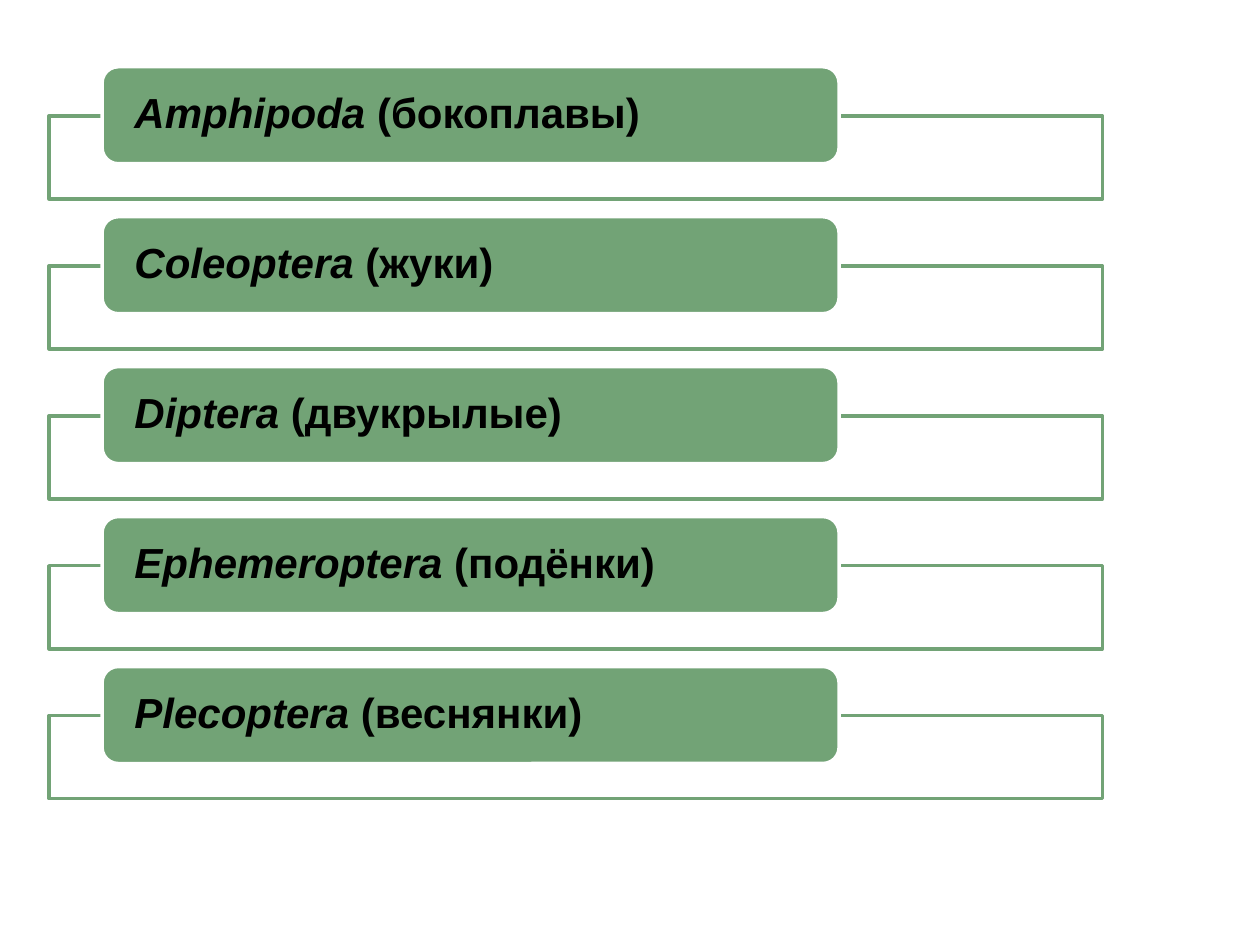
from lxml import etree
from pptx import Presentation
from pptx.dml.color import RGBColor
from pptx.enum.shapes import MSO_SHAPE
from pptx.enum.text import MSO_ANCHOR, PP_ALIGN
from pptx.oxml.ns import qn
from pptx.util import Inches, Pt

RECT = MSO_SHAPE.RECTANGLE
ROUND_RECT = MSO_SHAPE.ROUNDED_RECTANGLE
MIDDLE = MSO_ANCHOR.MIDDLE
LEFT = PP_ALIGN.LEFT

COLORS = {"green": "72A376", "white": "FFFFFF", "black": "000000"}
FONT = {"name": "Arial", "size": Pt(24), "bold": True}
FRAME_FORMAT = {
    "word_wrap": True,
    "vertical_anchor": MIDDLE,
    "margin_left": Inches(0.22),
    "margin_right": Inches(0.22),
    "margin_top": 0,
    "margin_bottom": 0,
}

# Latin order name and its Russian name
ORDERS = [
    ("Amphipoda", "бокоплавы"),
    ("Coleoptera", "жуки"),
    ("Diptera", "двукрылые"),
    ("Ephemeroptera", "подёнки"),
    ("Plecoptera", "веснянки"),
]
FIRST_TOP = 0.53
ROW_STEP = 1.19
FRAME_DROP = 0.39


def color(name):
    return RGBColor.from_string(COLORS[name])


def set_format(obj, values):
    for key, value in values.items():
        setattr(obj, key, value)


def add_box(slide, kind, left, top, width, height, fill, line):
    sp = slide.shapes.add_shape(
        kind, Inches(left), Inches(top), Inches(width), Inches(height))
    sp.shadow.inherit = False
    sp.fill.solid()
    sp.fill.fore_color.rgb = color(fill)
    sp.line.color.rgb = color(line)
    sp.line.width = Pt(2)
    return sp


def add_frame(slide, top):
    sp = add_box(slide, RECT, 0.39, top, 8.36, 0.66, "white", "green")
    # Fill at 90 % opacity
    clr = sp.fill._xPr.find(qn("a:solidFill")).find(qn("a:srgbClr"))
    etree.SubElement(clr, qn("a:alpha"), val="90000")


def add_label(slide, top, latin, russian):
    sp = add_box(slide, ROUND_RECT, 0.81, top, 5.85, 0.77, "green", "white")
    tf = sp.text_frame
    set_format(tf, FRAME_FORMAT)
    p = tf.paragraphs[0]
    set_format(p, {"alignment": LEFT, "line_spacing": 0.9})
    for text, italic in ((f"{latin} ", True), (f"({russian})", False)):
        r = p.add_run()
        r.text = text
        set_format(r.font, {**FONT, "italic": italic})
        r.font.color.rgb = color("black")


def main():
    prs = Presentation()
    prs.slide_width, prs.slide_height = Inches(10), Inches(7.5)
    slide = prs.slides.add_slide(prs.slide_layouts[6])

    # One outlined frame with a label on its top edge per order
    for i, (latin, russian) in enumerate(ORDERS):
        top = FIRST_TOP + i * ROW_STEP
        add_frame(slide, top + FRAME_DROP)
        add_label(slide, top, latin, russian)

    prs.save("out.pptx")


if __name__ == "__main__":
    main()
